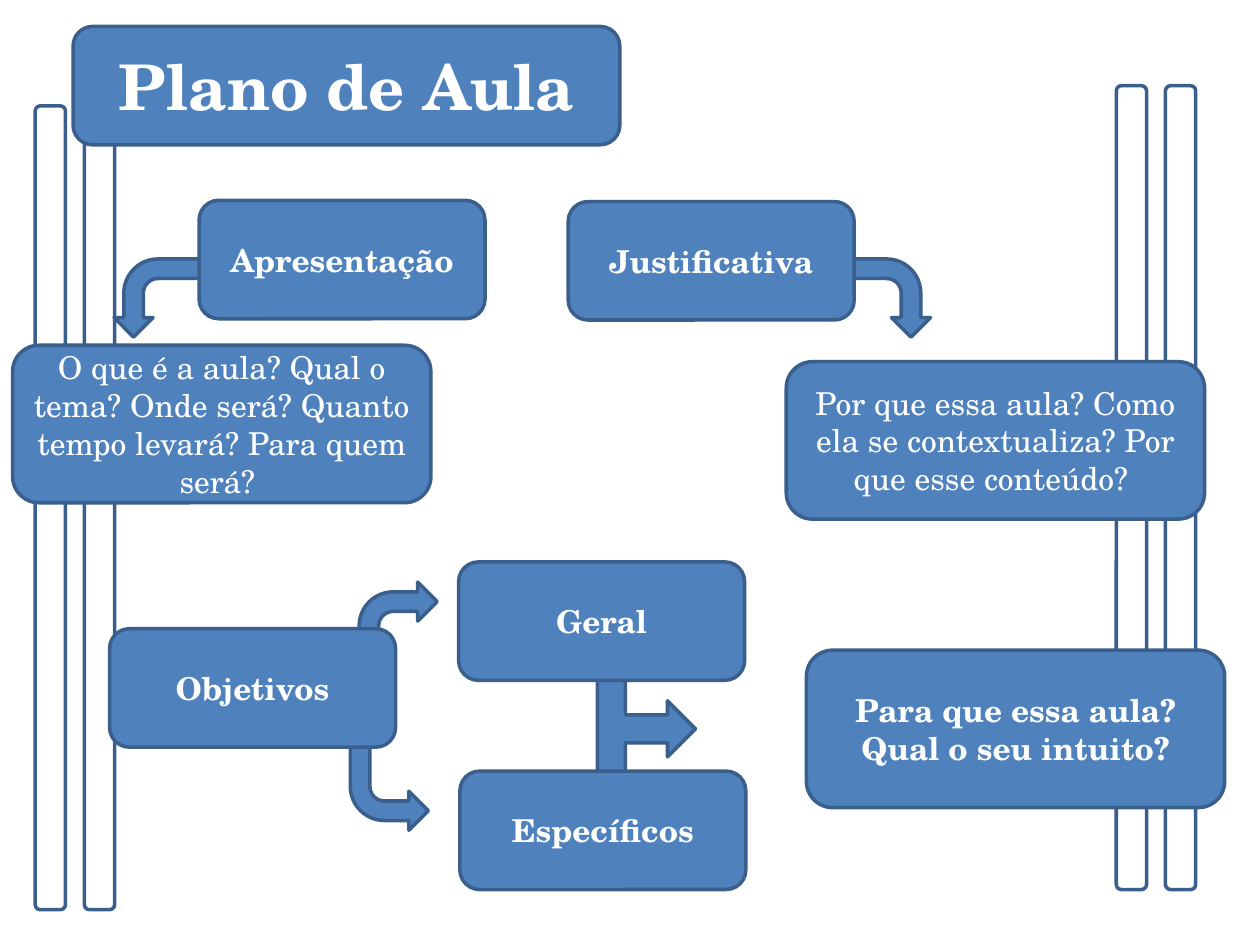
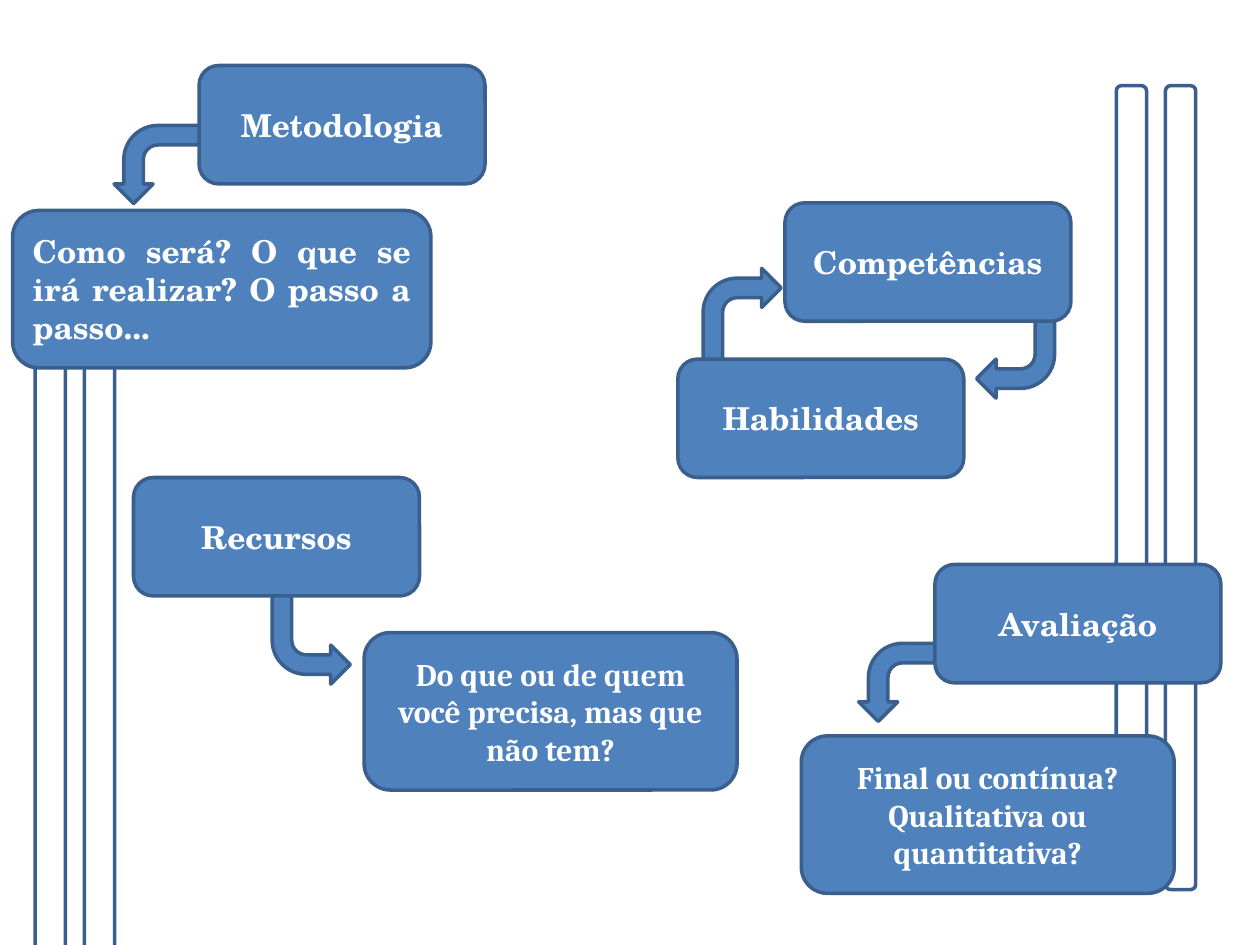
from pptx import Presentation
from pptx.dml.color import RGBColor
from pptx.enum.shapes import MSO_SHAPE
from pptx.enum.text import MSO_ANCHOR, PP_ALIGN
from pptx.oxml.ns import qn
from pptx.util import Inches, Pt

ROUNDED = MSO_SHAPE.ROUNDED_RECTANGLE
BENT_ARROW = MSO_SHAPE.BENT_ARROW
THREE_WAY_ARROW = MSO_SHAPE.LEFT_RIGHT_UP_ARROW
MIDDLE = MSO_ANCHOR.MIDDLE
CENTER = PP_ALIGN.CENTER
JUSTIFY = PP_ALIGN.JUSTIFY

BLUE = RGBColor(0x4F, 0x81, 0xBD)
OUTLINE = RGBColor(0x3A, 0x5F, 0x8C)
WHITE = RGBColor(0xFF, 0xFF, 0xFF)

SCHOOL_FONT = "TeX Gyre Schola"
SERIF_FONT = "Cambria"

# Sizes in inches
TITLE_SIZE = (4.34, 0.94)
TOPIC_SIZE = (2.27, 0.94)
ANSWER_SIZE = (3.32, 1.25)
NARROW_SIZE = (2.96, 1.25)
LONG_ARROW = (0.62, 0.81)
SHORT_ARROW = (0.62, 0.63)
BAR_SIZE = (0.24, 6.38)
BAR_STEP = 0.39


def add_outlined(page, kind, left, top, size, fill=BLUE):
    """Add a preset shape in the common outline style."""
    shape = page.shapes.add_shape(
        kind, Inches(left), Inches(top), Inches(size[0]), Inches(size[1]))
    shape.shadow.inherit = False
    shape.fill.solid()
    shape.fill.fore_color.rgb = fill
    shape.line.color.rgb = OUTLINE
    shape.line.width = Pt(2)
    return shape


def add_bars(page, left, top):
    """Add a pair of tall white bars."""
    for index in range(2):
        add_outlined(page, ROUNDED, left + index * BAR_STEP, top, BAR_SIZE, WHITE)


def add_arrow(page, left, top, size=LONG_ARROW, turn=0, flip=False, kind=BENT_ARROW):
    """Add a block arrow, turned clockwise and optionally flipped vertically."""
    arrow = add_outlined(page, kind, left, top, size)
    arrow.rotation = turn
    if flip:
        arrow._element.spPr.find(qn("a:xfrm")).set("flipV", "1")


def add_box(page, text, left, top, size=TOPIC_SIZE, points=18, bold=True,
            font=SCHOOL_FONT, align=CENTER):
    """Add a blue rounded box with white text."""
    box = add_outlined(page, ROUNDED, left, top, size)
    frame = box.text_frame
    frame.word_wrap = True
    frame.vertical_anchor = MIDDLE
    frame.text = text
    para = frame.paragraphs[0]
    para.alignment = align
    for span in para.runs:
        span.font.name = font
        span.font.size = Pt(points)
        span.font.bold = bold
        span.font.color.rgb = WHITE


def add_page(deck, left_bars_top):
    """Add a blank slide with bars along both sides."""
    page = deck.slides.add_slide(deck.slide_layouts[6])
    add_bars(page, 8.86, 0.68)
    add_bars(page, 0.28, left_bars_top)
    return page


def build_plan(deck):
    page = add_page(deck, 0.84)

    # Title and presentation
    add_arrow(page, 1, 1.96, turn=90, flip=True)
    add_box(page, "Plano de Aula", 0.58, 0.21, TITLE_SIZE, points=36)
    add_box(page, "Apresentação", 1.58, 1.59)
    add_box(page, "O que é a aula? Qual o tema? Onde será? Quanto tempo levará? "
            "Para quem será? ", 0.1, 2.74, ANSWER_SIZE, bold=False)

    # Justification
    add_arrow(page, 6.76, 2.05, SHORT_ARROW, turn=90)
    add_box(page, "Justificativa", 4.51, 1.6)
    add_box(page, "Por que essa aula? Como ela se contextualiza? "
            "Por que esse conteúdo? ", 6.24, 2.87, ANSWER_SIZE, bold=False)

    # Objectives
    add_arrow(page, 2.78, 5.78, flip=True)
    add_arrow(page, 2.85, 4.62, SHORT_ARROW)
    add_box(page, "Objetivos", 0.87, 4.99)
    add_arrow(page, 4.36, 5.34, (1.43, 0.89), turn=90, kind=THREE_WAY_ARROW)
    add_box(page, "Específicos", 3.65, 6.12)
    add_box(page, "Geral", 3.64, 4.46)
    add_box(page, "Para que essa aula? Qual o seu intuito?", 6.4, 5.16, ANSWER_SIZE)


def build_method(deck):
    page = add_page(deck, 2.25)

    # Methodology
    add_arrow(page, 1, 0.9, turn=90, flip=True)
    add_box(page, "Metodologia", 1.58, 0.52)
    add_box(page, "Como será? O que se irá realizar? O passo a passo...",
            0.1, 1.67, ANSWER_SIZE, align=JUSTIFY)

    # Competences and skills
    add_arrow(page, 7.75, 2.53, SHORT_ARROW, turn=180)
    add_box(page, "Competências", 6.23, 1.61)
    add_arrow(page, 5.58, 2.13)
    add_box(page, "Habilidades", 5.38, 2.85)

    # Resources
    add_box(page, "Do que ou de quem você precisa, mas que não tem?",
            2.89, 5.02, NARROW_SIZE, font=SERIF_FONT)
    add_arrow(page, 2.16, 4.62, flip=True)
    add_box(page, "Recursos", 1.06, 3.79)

    # Assessment
    add_box(page, "Final ou contínua? Qualitativa ou quantitativa?",
            6.36, 5.84, NARROW_SIZE, font=SERIF_FONT)
    add_arrow(page, 6.91, 5.01, turn=90, flip=True)
    add_box(page, "Avaliação", 7.42, 4.48)


def main():
    deck = Presentation()
    deck.slide_width = Inches(10)
    deck.slide_height = Inches(7.5)
    build_plan(deck)
    build_method(deck)
    deck.save("out.pptx")


if __name__ == "__main__":
    main()
